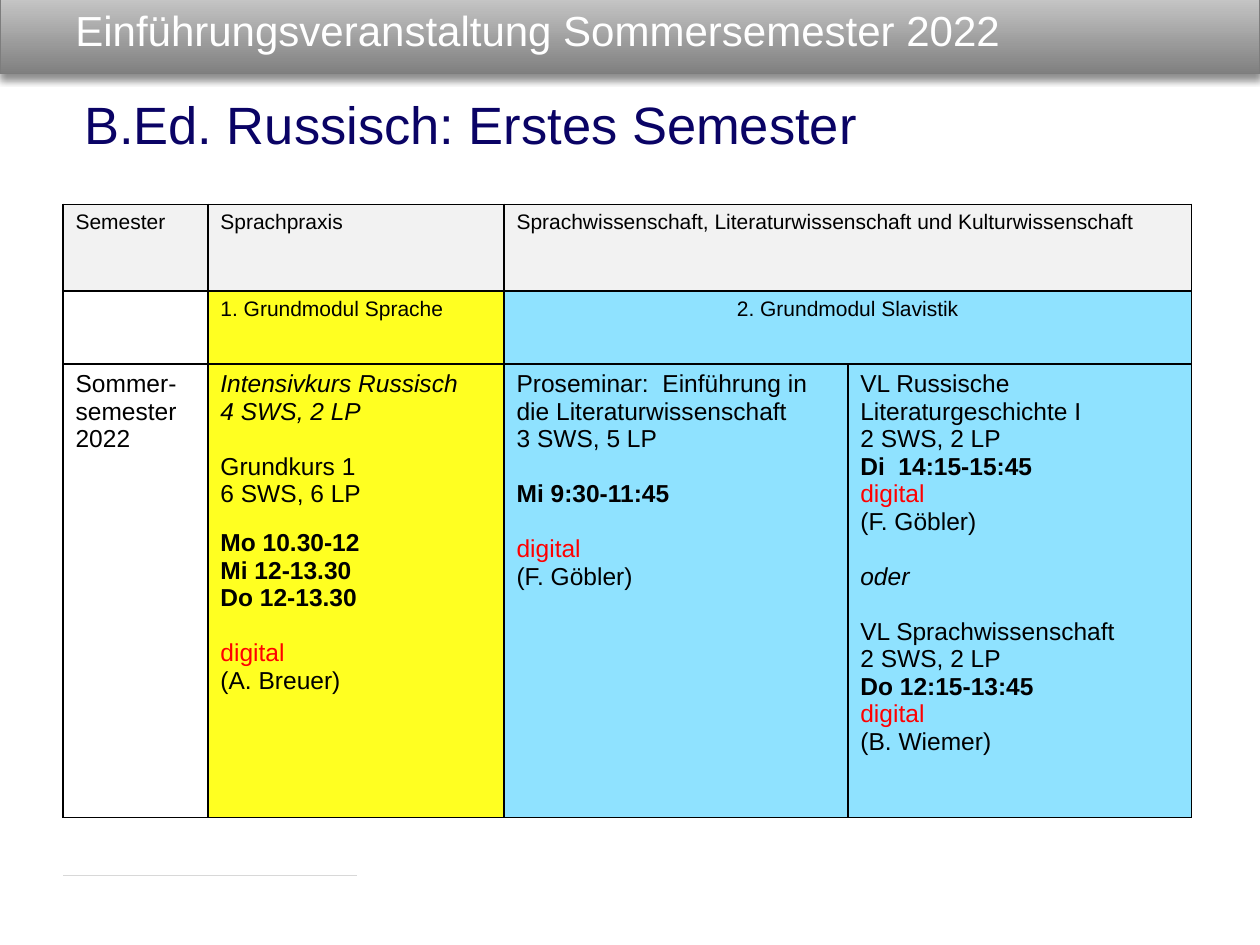
import pptx
import pptx.dml.color
import pptx.enum.shapes
import pptx.enum.text
import pptx.oxml
import pptx.util
from pptx.oxml.ns import nsdecls

Cm = pptx.util.Cm
Pt = pptx.util.Pt
ALIGN = pptx.enum.text.PP_ALIGN
ANCHOR = pptx.enum.text.MSO_ANCHOR

GREY, YELLOW, BLUE = "F2F2F2", "FFFF21", "8FE2FF"
BLACK, RED = "000000", "FF0000"
GAP = 15.7  # one line of 14 pt text

# Each line is text, style (b bold, i italic, r red) and space before in pt.
COURSE = [
    ("Intensivkurs Russisch", "i", 0),
    ("4 SWS, 2 LP", "i", 0),
    ("Grundkurs 1", "", GAP),
    ("6 SWS, 6 LP", "", 0),
    ("Mo 10.30-12", "b", 12.3),
    ("Mi 12-13.30", "b", 0),
    ("Do 12-13.30", "b", 0),
    ("digital", "r", GAP),
    ("(A. Breuer)", "", 0),
]
SEMINAR = [
    ("Proseminar:  Einführung in die Literaturwissenschaft", "", 0),
    ("3 SWS, 5 LP", "", 0),
    ("Mi 9:30-11:45", "b", GAP),
    ("digital", "r", GAP),
    ("(F. Göbler)", "", 0),
]
LECTURE = [
    ("VL Russische Literaturgeschichte I", "", 0),
    ("2 SWS, 2 LP", "", 0),
    ("Di  14:15-15:45", "b", 0),
    ("digital", "r", 0),
    ("(F. Göbler)", "", 0),
    ("oder", "i", GAP),
    ("VL Sprachwissenschaft", "", GAP),
    ("2 SWS, 2 LP", "", 0),
    ("Do 12:15-13:45", "b", 0),
    ("digital", "r", 0),
    ("(B. Wiemer)", "", 0),
]


def plain(text):
    return [(text, "", 0)]


ROWS = [
    [(plain("Semester"), GREY), (plain("Sprachpraxis"), GREY),
     (plain("Sprachwissenschaft, Literaturwissenschaft und Kulturwissenschaft"), GREY),
     ([], GREY)],
    [([], None), (plain("1. Grundmodul Sprache"), YELLOW),
     (plain("2. Grundmodul Slavistik"), BLUE), ([], BLUE)],
    [(plain("Sommer-semester 2022"), None), (COURSE, YELLOW),
     (SEMINAR, BLUE), (LECTURE, BLUE)],
]
SIZES = [12, 12, 14]
WIDTHS = [2.92, 5.97, 6.93, 6.93]
HEIGHTS = [1.75, 1.47, 9.14]


def rgb(code):
    return pptx.dml.color.RGBColor.from_string(code)


def style(par, size, color):
    par.font.name = "Arial"
    par.font.size = Pt(size)
    par.font.color.rgb = rgb(color)


def add_bar(slide):
    """Shaded band along the top edge."""
    bar = slide.shapes.add_shape(
        pptx.enum.shapes.MSO_SHAPE.RECTANGLE, Cm(0), Cm(-0.2), Cm(25.4), Cm(1.68))
    bar.fill.gradient()
    bar.fill.gradient_angle = 90
    for stop, code in zip(bar.fill.gradient_stops, ["808080", "CDCDCD"]):
        stop.color.rgb = rgb(code)
    bar.line.color.rgb = rgb("7D7D7D")
    bar.line.width = Pt(0.75)
    bar.shadow.inherit = False
    bar._element.spPr.find(pptx.oxml.ns.qn("a:effectLst")).append(pptx.oxml.parse_xml(
        f'<a:outerShdw {nsdecls("a")} blurRad="{Pt(4)}" dist="{Pt(3)}" dir="5400000"'
        ' rotWithShape="0"><a:srgbClr val="000000"><a:alpha val="43000"/>'
        '</a:srgbClr></a:outerShdw>'))


def add_rule(slide):
    """Thin line above the foot."""
    rule = slide.shapes.add_connector(
        pptx.enum.shapes.MSO_CONNECTOR.STRAIGHT, Cm(1.27), Cm(17.65), Cm(7.19), Cm(17.65))
    rule.line.color.rgb = rgb("D8D8D8")
    rule.line.width = Pt(0.75)
    rule._element.spPr.append(pptx.oxml.parse_xml(f'<a:effectLst {nsdecls("a")}/>'))


def add_text(slide, text, box, size, color, anchor):
    frame = slide.shapes.add_textbox(*map(Cm, box)).text_frame
    frame.word_wrap = True
    frame.vertical_anchor = anchor
    frame.paragraphs[0].text = text
    style(frame.paragraphs[0], size, color)


def add_edges(cell):
    props = cell._tc.get_or_add_tcPr()
    for spot, side in enumerate("LRTB"):
        props.insert(spot, pptx.oxml.parse_xml(
            f'<a:ln{side} {nsdecls("a")} w="{Pt(1)}"><a:solidFill>'
            f'<a:srgbClr val="{BLACK}"/></a:solidFill></a:ln{side}>'))


def fill_cell(cell, lines, color, size):
    if color:
        cell.fill.solid()
        cell.fill.fore_color.rgb = rgb(color)
    else:
        cell.fill.background()
    add_edges(cell)
    frame = cell.text_frame
    style(frame.paragraphs[0], size, BLACK)
    for index, (text, look, gap) in enumerate(lines):
        par = frame.add_paragraph() if index else frame.paragraphs[0]
        par.text = text
        style(par, size, RED if "r" in look else BLACK)
        par.font.bold = "b" in look
        par.font.italic = "i" in look
        if gap:
            par.space_before = Pt(gap)


def add_plan(slide):
    """Table of the courses in the first semester."""
    table = slide.shapes.add_table(
        len(ROWS), len(WIDTHS), Cm(1.27), Cm(4.12),
        Cm(sum(WIDTHS)), Cm(sum(HEIGHTS))).table
    table.first_row = table.horz_banding = False
    for column, width in zip(table.columns, WIDTHS):
        column.width = Cm(width)
    for row, height in zip(table.rows, HEIGHTS):
        row.height = Cm(height)
    for r, (row, size) in enumerate(zip(ROWS, SIZES)):
        for c, (lines, color) in enumerate(row):
            fill_cell(table.cell(r, c), lines, color, size)
    for r in (0, 1):
        table.cell(r, 2).merge(table.cell(r, 3))
    table.cell(1, 2).text_frame.paragraphs[0].alignment = ALIGN.CENTER


def main():
    deck = pptx.Presentation()
    deck.slide_width, deck.slide_height = Cm(25.4), Cm(19.05)
    slide = deck.slides.add_slide(deck.slide_layouts[6])
    add_bar(slide)
    add_rule(slide)
    add_text(slide, "Einführungsveranstaltung Sommersemester 2022",
             (1.27, 0, 23.55, 1.2), 24, "FFFFFF", ANCHOR.MIDDLE)
    add_text(slide, "B.Ed. Russisch: Erstes Semester",
             (1.45, 1.73, 22.05, 1.55), 30, "0A0365", ANCHOR.TOP)
    add_plan(slide)
    deck.save("out.pptx")


if __name__ == "__main__":
    main()
